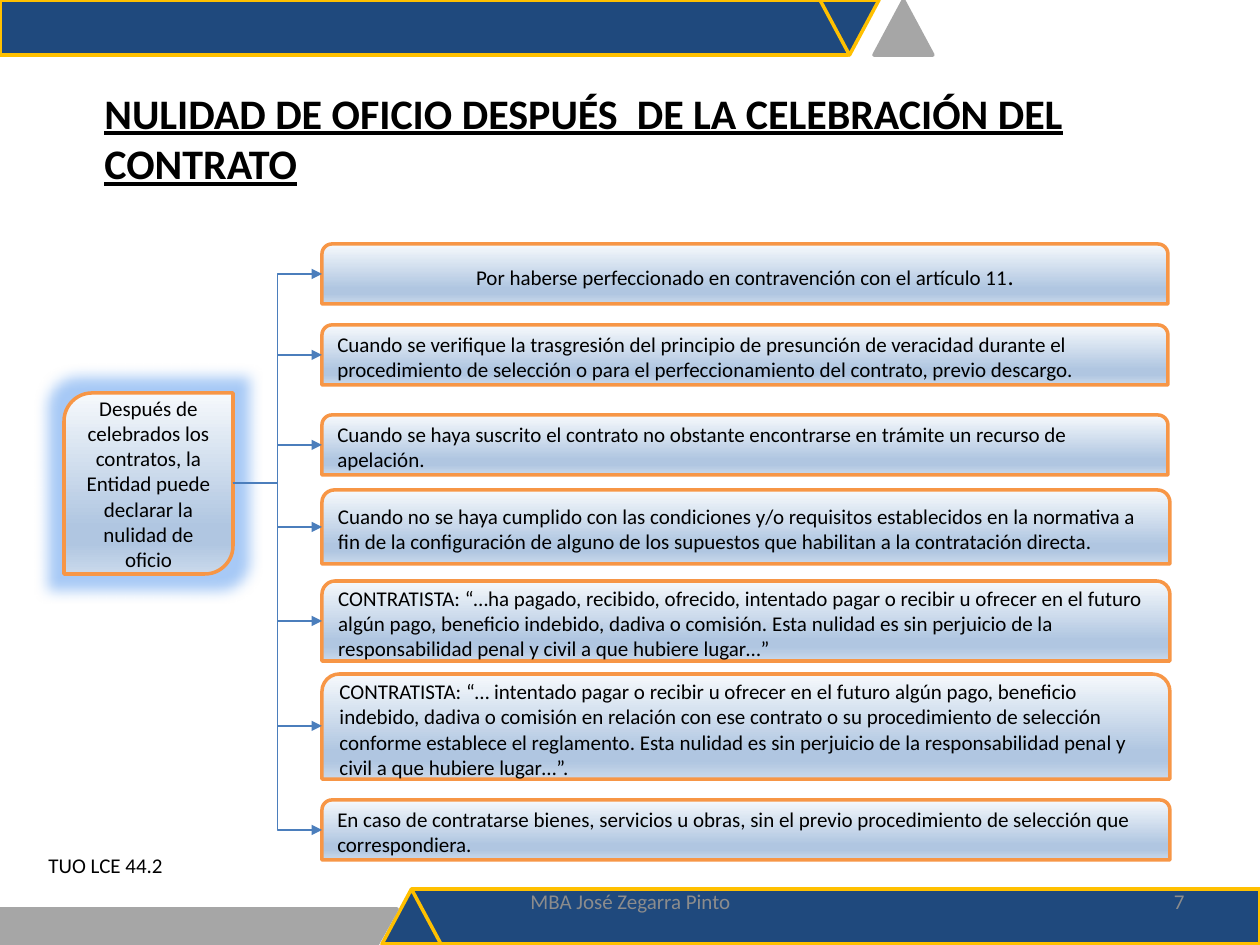
from lxml import etree
from pptx import Presentation
from pptx.dml.color import RGBColor
from pptx.enum.shapes import MSO_CONNECTOR, MSO_SHAPE
from pptx.enum.text import MSO_ANCHOR, PP_ALIGN
from pptx.oxml.ns import qn
from pptx.util import Emu, Pt

PX = 914400 // 126
RECT, TRI = MSO_SHAPE.RECTANGLE, MSO_SHAPE.FLOWCHART_EXTRACT
TAB, LEAF = MSO_SHAPE.ROUND_2_SAME_RECTANGLE, MSO_SHAPE.ROUND_2_DIAG_RECTANGLE
ELBOW = MSO_CONNECTOR.ELBOW
LEFT, MID, RIGHT = PP_ALIGN.LEFT, PP_ALIGN.CENTER, PP_ALIGN.RIGHT
TOP, CENTER = MSO_ANCHOR.TOP, MSO_ANCHOR.MIDDLE

BLACK = RGBColor(0x00, 0x00, 0x00)
NAVY = RGBColor(0x1F, 0x49, 0x7D)
GOLD = RGBColor(0xFF, 0xC0, 0x00)
GRAY = RGBColor(0xA6, 0xA6, 0xA6)
DIM = RGBColor(0x8C, 0x8C, 0x8C)
ORANGE = RGBColor(0xF7, 0x96, 0x46)
BLUE = RGBColor(0x4B, 0x7E, 0xBC)
GLOW = RGBColor(0x23, 0x79, 0xE9)
FADE = [(0, "F6F9FC"), (74, "B0C6E1"), (83, "B0C6E1"), (100, "CAD9EB")]

# kind, box, fill, line, turn
BANDS = [
    (RECT, (0, 0, 848, 55), NAVY, GOLD, 0),
    (TRI, (820, 0, 59, 55), NAVY, GOLD, 180),
    (TRI, (874, 0, 59, 55), GRAY, GRAY, 0),
    (RECT, (412, 889, 848, 55), NAVY, GOLD, 0),
    (RECT, (0, 909, 377, 35), GRAY, GRAY, 0),
    (TRI, (382, 889, 59, 55), NAVY, GOLD, 0),
    (TRI, (358, 909, 39, 35), GRAY, GRAY, 180),
]

TITLE = "NULIDAD DE OFICIO DESPUÉS  DE LA CELEBRACIÓN DEL CONTRATO"
ROOT = "Después de celebrados los contratos, la Entidad puede declarar la nulidad de oficio"
ROOT_BOX = (64, 393, 169, 181)

# top, width, height, align, runs
CASE_X = 322
CASES = [
    (244, 846, 60, MID, [
        ("Por haberse perfeccionado en contravención con el artículo 11", 12), (".", 14)]),
    (325, 846, 60, LEFT, [
        ("Cuando se verifique la trasgresión del principio de presunción de veracidad "
         "durante el procedimiento de selección o para el perfeccionamiento del contrato, "
         "previo descargo.", 12)]),
    (415, 846, 60, LEFT, [
        ("Cuando se haya suscrito el contrato no obstante encontrarse en trámite un "
         "recurso de apelación.", 12)]),
    (490, 848, 74, LEFT, [
        ("Cuando no se haya cumplido con las condiciones y/o requisitos establecidos en la "
         "normativa a fin de la configuración de alguno de los supuestos que habilitan a la "
         "contratación directa.", 12)]),
    (581, 848, 80, LEFT, [
        ("CONTRATISTA: “…ha pagado, recibido, ofrecido, intentado pagar o recibir u ofrecer "
         "en el futuro algún pago, beneficio indebido, dadiva o comisión. Esta nulidad es sin "
         "perjuicio de la responsabilidad penal y civil a que hubiere lugar…”", 12)]),
    (674, 848, 105, LEFT, [
        ("CONTRATISTA: “… intentado pagar o recibir u ofrecer en el futuro algún pago, "
         "beneficio indebido, dadiva o comisión en relación con ese contrato o su "
         "procedimiento de selección conforme establece el reglamento. Esta nulidad es sin "
         "perjuicio de la responsabilidad penal y civil a que hubiere lugar…”.", 12)]),
    (800, 848, 60, LEFT, [
        ("En caso de contratarse bienes, servicios u obras, sin el previo procedimiento de "
         "selección que correspondiera.", 12)]),
]


def scale(box):
    return [Emu(n * PX) for n in box]


def write(shape, runs, align=LEFT, anchor=CENTER, color=BLACK, strong=False, wrap=True):
    frame = shape.text_frame
    frame.word_wrap = wrap
    frame.vertical_anchor = anchor
    para = frame.paragraphs[0]
    para.alignment = align
    for text, size in runs:
        run = para.add_run()
        run.text = text
        font = run.font
        font.name, font.size = "Calibri", Pt(size)
        font.color.rgb = color
        if strong:
            font.bold = font.underline = True


def add_form(shapes, kind, box, line):
    shape = shapes.add_shape(kind, *scale(box))
    shape.shadow.inherit = False
    shape.line.color.rgb = line
    shape.line.width = Pt(2)
    return shape


def add_panel(shapes, kind, box, runs, align):
    """Add an outlined box with the four-stop vertical fade."""
    shape = add_form(shapes, kind, box, ORANGE)
    shape.fill.gradient()
    shape.fill.gradient_angle = 270
    stops = shape._element.spPr.find(".//" + qn("a:gsLst"))
    for old in list(stops):
        stops.remove(old)
    for pos, tone in FADE:
        stop = etree.SubElement(stops, qn("a:gs"), pos=str(pos * 1000))
        etree.SubElement(stop, qn("a:srgbClr"), val=tone)
    write(shape, runs, align)
    return shape


def add_glow(shape):
    effects = shape._element.spPr.find(qn("a:effectLst"))
    glow = etree.SubElement(effects, qn("a:glow"), rad=str(29 * PX))
    tone = etree.SubElement(glow, qn("a:srgbClr"), val=str(GLOW))
    etree.SubElement(tone, qn("a:alpha"), val="40000")


def add_arrow(shapes, start, end):
    arrow = shapes.add_connector(ELBOW, *scale(start + end))
    arrow.line.color.rgb = BLUE
    arrow.line.width = Pt(0.75)
    props = arrow._element.spPr
    etree.SubElement(props.find(qn("a:ln")), qn("a:tailEnd"), type="triangle")
    etree.SubElement(props, qn("a:effectLst"))


def add_label(shapes, box, text, size=12, **style):
    write(shapes.add_textbox(*scale(box)), [(text, size)], **style)


def main():
    deck = Presentation()
    deck.slide_width, deck.slide_height = scale((1260, 945))
    shapes = deck.slides.add_slide(deck.slide_layouts[6]).shapes

    for kind, box, fill, line, turn in BANDS:
        band = add_form(shapes, kind, box, line)
        band.fill.solid()
        band.fill.fore_color.rgb = fill
        band.rotation = turn

    add_label(shapes, (431, 876, 399, 50), "MBA José Zegarra Pinto", align=MID, color=DIM)
    add_label(shapes, (903, 876, 294, 50), "7", align=RIGHT, color=DIM)
    add_label(shapes, (92, 81, 1082, 115), TITLE, 24, anchor=TOP, strong=True)

    add_glow(add_panel(shapes, LEAF, ROOT_BOX, [(ROOT, 12)], MID))
    x, y, wide, high = ROOT_BOX
    start = (x + wide, y + high // 2)
    for top, width, height, align, runs in CASES:
        add_panel(shapes, TAB, (CASE_X, top, width, height), runs, align)
        add_arrow(shapes, start, (CASE_X, top + height // 2))

    add_label(shapes, (36, 846, 141, 38), "TUO LCE 44.2", anchor=TOP, wrap=False)
    deck.save("out.pptx")


if __name__ == "__main__":
    main()
